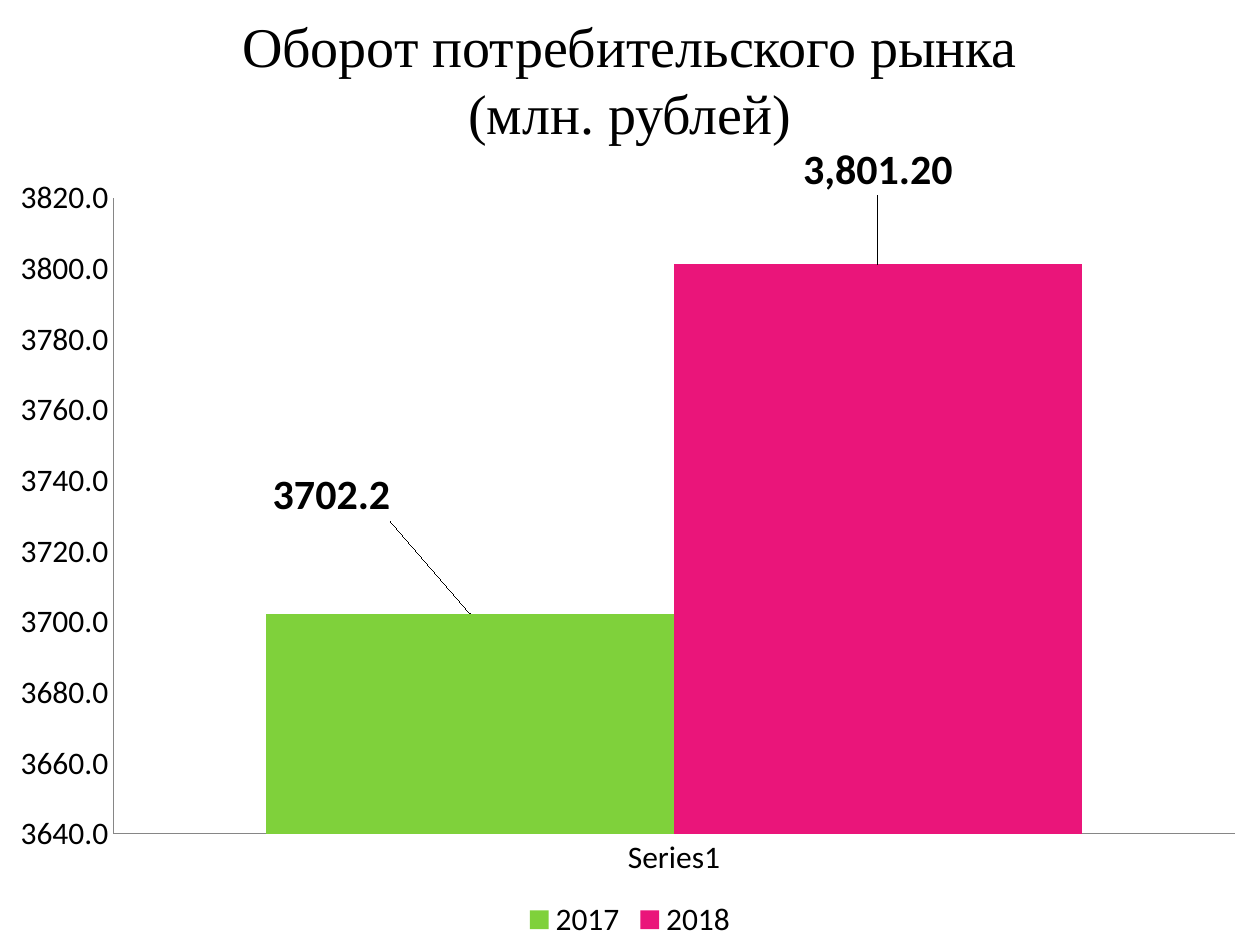
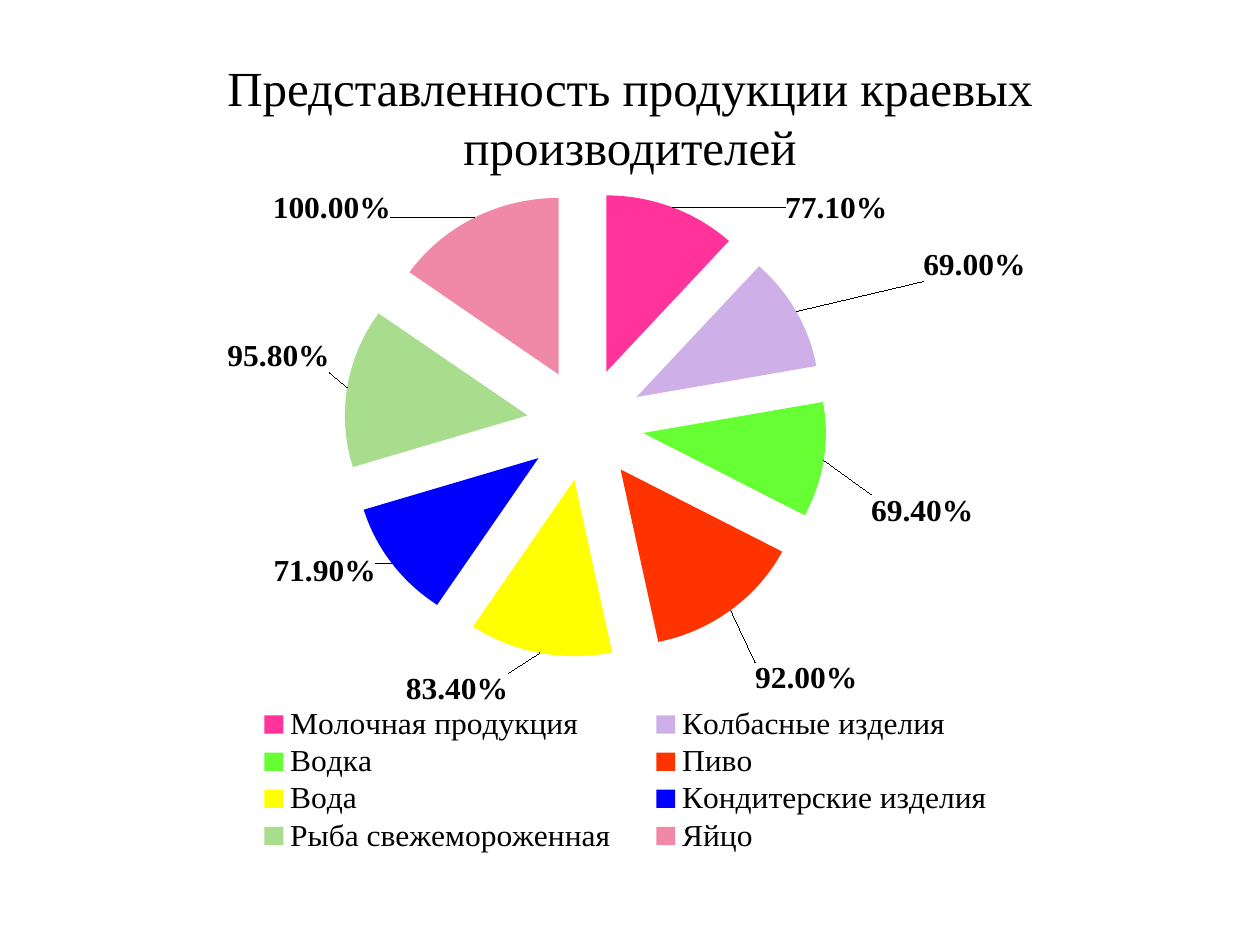
from dataclasses import dataclass

from lxml.etree import SubElement
from pptx import Presentation
from pptx.chart.chart import Chart
from pptx.chart.data import CategoryChartData
from pptx.chart.point import Point
from pptx.dml.color import RGBColor
from pptx.enum.chart import XL_CHART_TYPE as ChartType
from pptx.enum.chart import XL_LABEL_POSITION as LabelPosition
from pptx.enum.chart import XL_LEGEND_POSITION as LegendPosition
from pptx.enum.chart import XL_TICK_MARK as TickMark
from pptx.enum.text import MSO_ANCHOR as Anchor
from pptx.enum.text import PP_ALIGN as Align
from pptx.oxml.ns import qn
from pptx.slide import Slide
from pptx.util import Inches, Pt

BLACK = RGBColor(0x00, 0x00, 0x00)
AXIS_GRAY = RGBColor(0x86, 0x86, 0x86)
GREEN = RGBColor(0x7F, 0xD1, 0x3B)
MAGENTA = RGBColor(0xEA, 0x15, 0x7A)
PINK = RGBColor(0xFF, 0x33, 0x99)
LILAC = RGBColor(0xCF, 0xAF, 0xE7)
LIME = RGBColor(0x66, 0xFF, 0x33)
ORANGE = RGBColor(0xFF, 0x33, 0x00)
YELLOW = RGBColor(0xFF, 0xFF, 0x00)
BLUE = RGBColor(0x00, 0x00, 0xFF)
PALE_GREEN = RGBColor(0xA7, 0xDD, 0x8C)
PALE_ROSE = RGBColor(0xF0, 0x88, 0xA7)
SERIF = "Times New Roman"
SANS = "Calibri"


@dataclass(frozen=True)
class Title:
    """Wording, place and size of a slide title."""

    text: str
    left: float
    top: float
    size: int


@dataclass(frozen=True)
class Value:
    """A charted value with its colour, label format and label offset."""

    name: str
    amount: float
    color: RGBColor
    offset: tuple[float, float]
    number_format: str = "0.00%"


TURNOVER = [
    Value("2017", 3702.2, GREEN, (-0.11, -0.11), "0.0"),
    Value("2018", 3801.2, MAGENTA, (0, -0.08), "#,##0.00"),
]
PRODUCTS = [
    Value("Молочная продукция", 0.771, PINK, (0.11, 0.03)),
    Value("Колбасные изделия", 0.69, LILAC, (0.12, -0.04)),
    Value("Водка", 0.694, LIME, (0.04, 0.05)),
    Value("Пиво", 0.92, ORANGE, (0.02, 0.07)),
    Value("Вода", 0.834, YELLOW, (-0.03, 0.02)),
    Value("Кондитерские изделия", 0.719, BLUE, (-0.01, -0.02)),
    Value("Рыба свежемороженная", 0.958, PALE_GREEN, (-0.01, -0.02)),
    Value("Яйцо", 1, PALE_ROSE, (-0.08, 0.01)),
]


def add_title(slide: Slide, title: Title) -> None:
    """Add a centred serif title."""
    box = slide.shapes.add_textbox(Inches(title.left), Inches(title.top), Inches(9), Inches(1.25))
    frame = box.text_frame
    frame.word_wrap = True
    frame.vertical_anchor = Anchor.MIDDLE
    frame.text = title.text
    paragraph = frame.paragraphs[0]
    paragraph.alignment = Align.CENTER
    paragraph.font.name = SERIF
    paragraph.font.size = Pt(title.size)
    paragraph.font.color.rgb = BLACK


def set_layout(parent, index: int, **settings: float | str) -> None:
    """Give a chart part a manual layout at the given child index."""
    for old_layout in parent.findall(qn("c:layout")):
        parent.remove(old_layout)
    layout = SubElement(parent, qn("c:layout"))
    manual = SubElement(layout, qn("c:manualLayout"))
    for name, setting in settings.items():
        SubElement(manual, qn(f"c:{name}")).set("val", str(setting))
    parent.insert(index, layout)


def set_plot_area(chart: Chart, x: float, y: float, w: float, h: float) -> None:
    """Fix the inner plot area as fractions of the chart."""
    plot_area = chart.element.find(".//" + qn("c:plotArea"))
    set_layout(plot_area, 0, layoutTarget="inner", xMode="edge", yMode="edge", x=x, y=y, w=w, h=h)


def style_point(series, point: Point, index: int, value: Value, font_name: str, size: int) -> None:
    """Colour a point and place its bold value label."""
    point.format.fill.solid()
    point.format.fill.fore_color.rgb = value.color
    label = point.data_label
    label.position = LabelPosition.OUTSIDE_END
    label.font.name = font_name
    label.font.size = Pt(size)
    label.font.bold = True
    label.font.color.rgb = BLACK
    label_element = series.data_labels._element.findall(qn("c:dLbl"))[index]
    x, y = value.offset
    set_layout(label_element, 1, x=x, y=y)
    number_format = SubElement(label_element, qn("c:numFmt"))
    number_format.set("formatCode", value.number_format)
    number_format.set("sourceLinked", "0")
    label_element.insert(2, number_format)


def add_chart(slide: Slide, kind: ChartType, data: CategoryChartData,
              frame: tuple[float, float, float, float], legend_font: str) -> Chart:
    """Add an untitled chart with a legend at the bottom."""
    chart = slide.shapes.add_chart(kind, *map(Inches, frame), data).chart
    chart.has_title = False
    chart.font.name = SANS
    chart.font.size = Pt(18)
    chart.font.color.rgb = BLACK
    chart.has_legend = True
    chart.legend.position = LegendPosition.BOTTOM
    chart.legend.include_in_layout = False
    chart.legend.font.name = legend_font
    chart.legend.font.size = Pt(18)
    chart.legend.font.color.rgb = BLACK
    return chart


def build_turnover(slide: Slide) -> None:
    """Build the slide with the yearly turnover columns."""
    add_title(slide, Title("Оборот потребительского рынка\v(млн. рублей)", 0.5, 0, 32))
    data = CategoryChartData(number_format="0.0")
    data.categories = ["Series1"]
    for year in TURNOVER:
        data.add_series(year.name, [year.amount])
    chart = add_chart(slide, ChartType.COLUMN_CLUSTERED, data, (0, 1.15, 10, 6.35), SANS)
    set_plot_area(chart, 0.09, 0.06, 0.89, 0.8)
    plot = chart.plots[0]
    plot.vary_by_categories = False
    plot.gap_width = 75
    plot.overlap = 0
    for series, year in zip(plot.series, TURNOVER):
        series.format.fill.solid()
        series.format.fill.fore_color.rgb = year.color
        style_point(series, series.points[0], 0, year, SANS, 24)
    for axis in (chart.category_axis, chart.value_axis):
        axis.has_major_gridlines = False
        axis.major_tick_mark = axis.minor_tick_mark = TickMark.NONE
        axis.format.line.color.rgb = AXIS_GRAY
    value_axis = chart.value_axis
    value_axis.minimum_scale, value_axis.maximum_scale = 3640, 3820
    value_axis.major_unit = 20
    value_axis.tick_labels.number_format = "0.0"
    value_axis.tick_labels.number_format_is_linked = False


def build_products(slide: Slide) -> None:
    """Build the slide with the exploded pie of products."""
    add_title(slide, Title("Представленность продукции краевых производителей", 0.5, 0.3, 28))
    data = CategoryChartData(number_format="0.00%")
    data.categories = [product.name for product in PRODUCTS]
    data.add_series("Series 1", [product.amount for product in PRODUCTS])
    chart = add_chart(slide, ChartType.PIE, data, (0.94, 1.33, 7.97, 5.47), SERIF)
    set_plot_area(chart, 0.04, 0, 0.85, 0.7)
    set_layout(chart.legend._element, 1, xMode="edge", yMode="edge", x=0.11, y=0.77, w=0.79, h=0.23)
    chart.plots[0].vary_by_categories = True
    series = chart.plots[0].series[0]
    explosion = SubElement(series._element, qn("c:explosion"))
    explosion.set("val", "32")
    series._element.find(qn("c:tx")).addnext(explosion)
    for index, product in enumerate(PRODUCTS):
        style_point(series, series.points[index], index, product, SERIF, 18)


def main() -> None:
    """Build and save the presentation."""
    presentation = Presentation()
    presentation.slide_width = Inches(10)
    presentation.slide_height = Inches(7.5)
    for build in (build_turnover, build_products):
        build(presentation.slides.add_slide(presentation.slide_layouts[6]))
    presentation.save("out.pptx")


if __name__ == "__main__":
    main()
